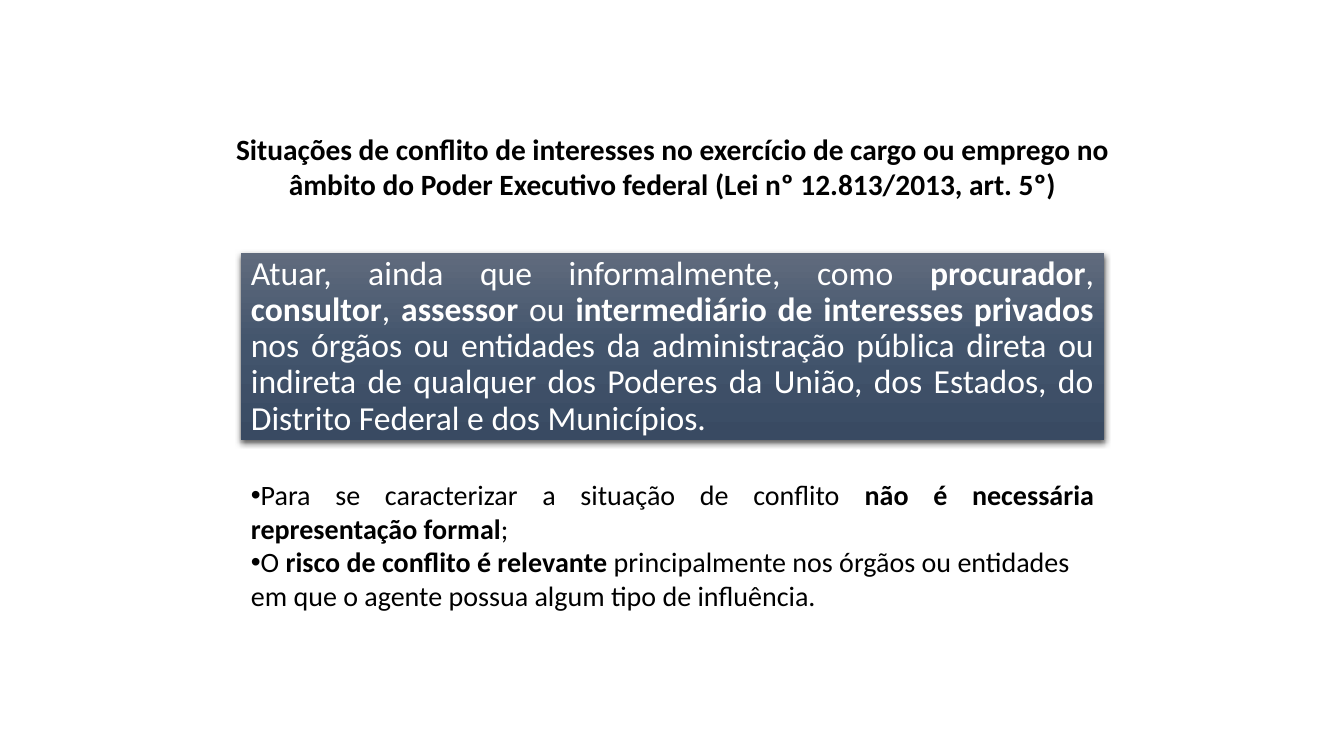
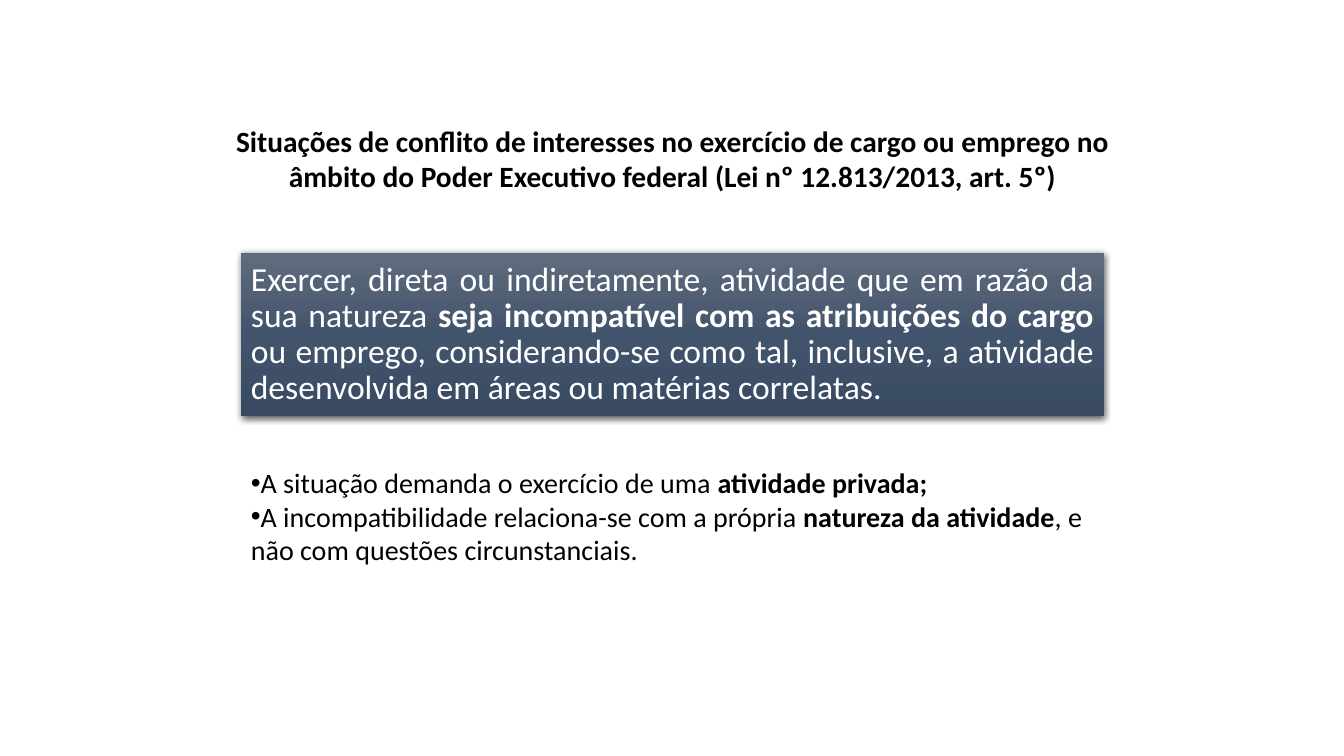
from copy import deepcopy
from dataclasses import dataclass

from lxml import etree
from pptx import Presentation
from pptx.dml.color import RGBColor
from pptx.enum import shapes, text
from pptx.oxml import ns
from pptx.util import Inches, Pt

# Shared style
BLACK = RGBColor(0x00, 0x00, 0x00)
WHITE = RGBColor(0xFF, 0xFF, 0xFF)
GRADIENT = (
    (0, RGBColor(0x60, 0x6B, 0x7D)),
    (0.5, RGBColor(0x42, 0x54, 0x6C)),
    (1, RGBColor(0x39, 0x4A, 0x62)),
)
FONT = "Calibri"
LEFT, WIDTH = 2.39, 8.56
BOX_TOP = 2.51
TITLE = (
    "**Situações de conflito de interesses no exercício de cargo ou emprego no "
    "âmbito do Poder Executivo federal (Lei nº 12.813/2013, art. 5º)**"
)
CENTER, JUSTIFY, LEFT_ALIGN = (
    text.PP_ALIGN.CENTER, text.PP_ALIGN.JUSTIFY, text.PP_ALIGN.LEFT)
MIDDLE = text.MSO_ANCHOR.MIDDLE


@dataclass(frozen=True)
class Situation:
    """One slide; ** marks bold text."""
    title_top: float
    box_height: float
    rule: str
    bullets_top: float
    bullets_height: float
    bullets: tuple[str, str]


SITUATIONS = (
    Situation(
        1.31, 1.86,
        "Atuar, ainda que informalmente, como **procurador**, **consultor**, "
        "**assessor** ou **intermediário de interesses privados** nos órgãos ou "
        "entidades da administração pública direta ou indireta de qualquer dos "
        "Poderes da União, dos Estados, do Distrito Federal e dos Municípios.",
        4.69, 1.45,
        ("Para se caracterizar a situação de conflito **não é necessária "
         "representação formal**;",
         "O **risco de conflito é relevante **principalmente nos órgãos ou "
         "entidades em que o agente possua algum tipo de influência."),
    ),
    Situation(
        1.23, 1.62,
        "Exercer, direta ou indiretamente, atividade que em razão da sua natureza "
        "**seja incompatível com as atribuições do cargo **ou emprego, "
        "considerando-se como tal, inclusive, a atividade desenvolvida em áreas "
        "ou matérias correlatas.",
        4.57, 1.11,
        ("A situação demanda o exercício de uma **atividade privada;**",
         "A incompatibilidade relaciona-se com a própria **natureza da "
         "atividade**, e não com questões circunstanciais."),
    ),
)


# Text helpers
def set_frame(tf, inset_x: float, inset_y: float, **values) -> None:
    insets = dict(margin_left=Inches(inset_x), margin_right=Inches(inset_x),
                  margin_top=Inches(inset_y), margin_bottom=Inches(inset_y))
    for name, value in {"word_wrap": True, **insets, **values}.items():
        setattr(tf, name, value)


def write(p, marked: str, size: float, color: RGBColor, align) -> None:
    p.alignment = align
    for i, part in enumerate(marked.split("**")):
        if not part:
            continue
        r = p.add_run()
        r.text = part
        font = {"name": FONT, "size": Pt(size), "bold": i % 2 == 1}
        for name, value in font.items():
            setattr(r.font, name, value)
        r.font.color.rgb = color


def add_bullet(p) -> None:
    pPr = p._p.get_or_add_pPr()
    pPr.set("marL", "0")
    pPr.set("indent", str(Inches(-0.31)))
    etree.SubElement(pPr, ns.qn("a:buFont"), typeface="Arial")
    etree.SubElement(pPr, ns.qn("a:buChar"), char="•")


# Box finish
def fill_gradient(sp) -> None:
    sp.fill.gradient()
    sp.fill.gradient_angle = 270
    stops = sp._element.spPr.find(".//" + ns.qn("a:gsLst"))
    stops.append(deepcopy(stops[0]))
    for stop, (position, color) in zip(sp.fill.gradient_stops, GRADIENT):
        stop.position = position
        stop.color.rgb = color


def add_shadow(sp) -> None:
    sp.shadow.inherit = False
    effects = sp._element.spPr.find(ns.qn("a:effectLst"))
    shadow = etree.SubElement(
        effects, ns.qn("a:outerShdw"), blurRad=str(Pt(4.5)), dist=str(Pt(1.5)),
        dir="5400000", algn="ctr", rotWithShape="0")
    color = etree.SubElement(shadow, ns.qn("a:srgbClr"), val=str(BLACK))
    etree.SubElement(color, ns.qn("a:alpha"), val="63000")


# Slide parts
def add_title(slide, top: float) -> None:
    sp = slide.shapes.add_textbox(
        Inches(2.24), Inches(top), Inches(8.86), Inches(0.68))
    set_frame(sp.text_frame, 0.07, 0.04, vertical_anchor=MIDDLE)
    write(sp.text_frame.paragraphs[0], TITLE, 21, BLACK, CENTER)


def add_rule_box(slide, rule: str, height: float) -> None:
    sp = slide.shapes.add_shape(
        shapes.MSO_SHAPE.RECTANGLE,
        Inches(LEFT), Inches(BOX_TOP), Inches(WIDTH), Inches(height))
    fill_gradient(sp)
    sp.line.fill.background()
    add_shadow(sp)
    set_frame(sp.text_frame, 0.1, 0.1, vertical_anchor=MIDDLE)
    p = sp.text_frame.paragraphs[0]
    p.line_spacing = 0.9
    write(p, rule, 24, WHITE, JUSTIFY)


def add_bullet_list(slide, item: Situation) -> None:
    sp = slide.shapes.add_textbox(
        Inches(LEFT), Inches(item.bullets_top),
        Inches(WIDTH), Inches(item.bullets_height))
    tf = sp.text_frame
    set_frame(tf, 0.1, 0.05, auto_size=text.MSO_AUTO_SIZE.SHAPE_TO_FIT_TEXT)
    for i, (bullet, align) in enumerate(zip(item.bullets, (JUSTIFY, LEFT_ALIGN))):
        p = tf.add_paragraph() if i else tf.paragraphs[0]
        write(p, bullet, 20, BLACK, align)
        add_bullet(p)


def main() -> None:
    prs = Presentation()
    prs.slide_width, prs.slide_height = Inches(13.33), Inches(7.5)
    for item in SITUATIONS:
        slide = prs.slides.add_slide(prs.slide_layouts[6])
        add_title(slide, item.title_top)
        add_rule_box(slide, item.rule, item.box_height)
        add_bullet_list(slide, item)
    prs.save("out.pptx")


if __name__ == "__main__":
    main()
